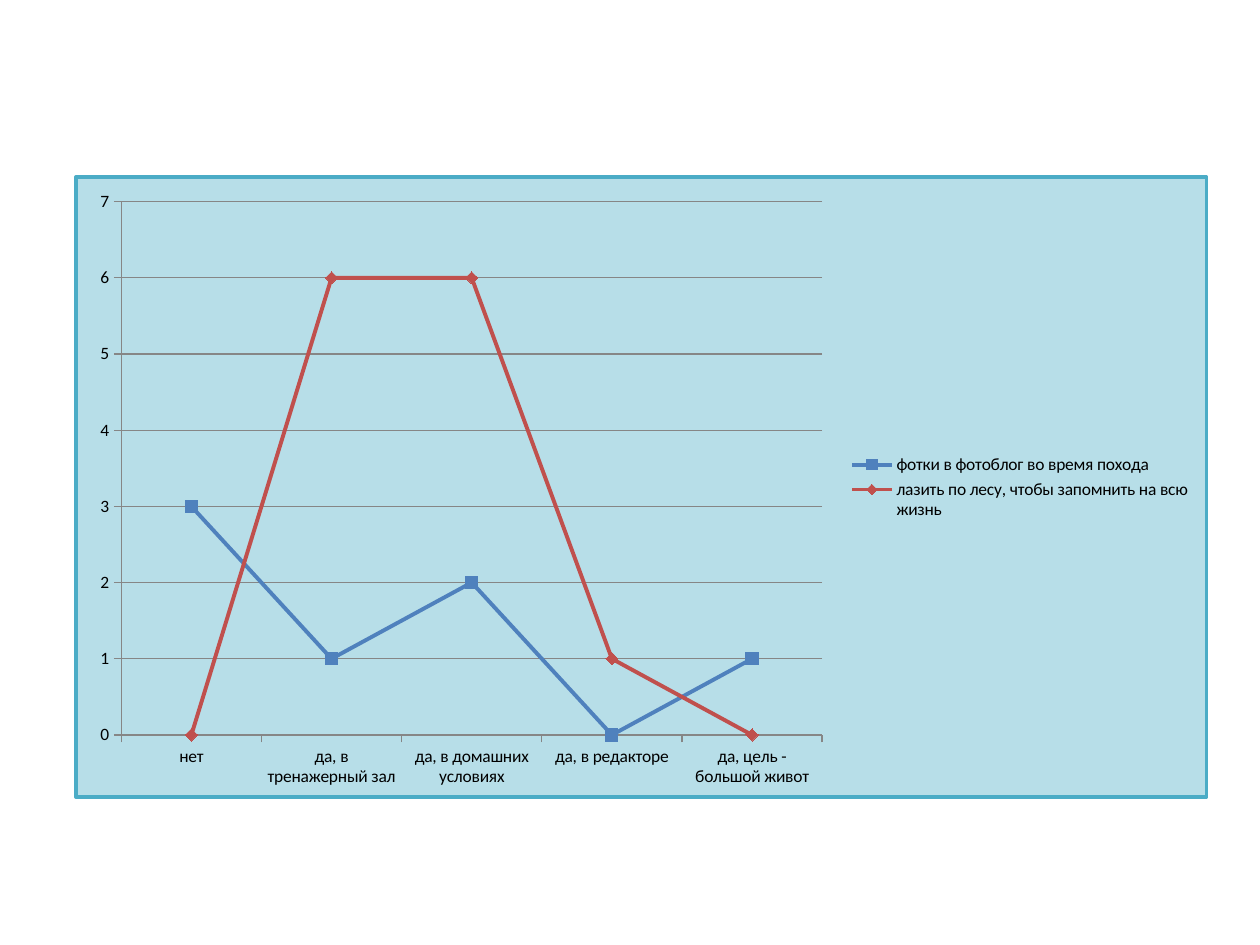
"""Build a slide with one line chart comparing two groups of answers."""
import lxml.etree
import pptx
import pptx.chart.data
import pptx.dml.color
import pptx.enum.chart
import pptx.oxml
import pptx.oxml.ns
import pptx.util

Inches, Pt = pptx.util.Inches, pptx.util.Pt
RGBColor = pptx.dml.color.RGBColor
Marker = pptx.enum.chart.XL_MARKER_STYLE

BLACK = RGBColor(0x00, 0x00, 0x00)
GRAY = RGBColor(0x86, 0x86, 0x86)
BLUE = RGBColor(0x4F, 0x81, 0xBD)
RED = RGBColor(0xC0, 0x50, 0x4D)
PALE_TEAL = RGBColor(0xB7, 0xDE, 0xE8)
TEAL = RGBColor(0x4B, 0xAC, 0xC6)

ANSWERS = [
    "нет",
    "да, в тренажерный зал",
    "да, в домашних условиях",
    "да, в редакторе",
    "да, цель - большой живот",
]
GROUPS = [
    ("фотки в фотоблог во время похода", (3, 1, 2, 0, 1), BLUE, Marker.SQUARE),
    ("лазить по лесу, чтобы запомнить на всю жизнь", (0, 6, 6, 1, 0), RED, Marker.DIAMOND),
]
CHART_BOX = (0.59, 1.39, 9, 4.95)
PLOT_AREA = {"x": 0.04, "y": 0.04, "w": 0.62, "h": 0.86}
LEGEND_AREA = {"x": 0.68, "y": 0.44, "w": 0.31, "h": 0.12}


def format_line(line, color, width):
    line.color.rgb = color
    line.width = Pt(width)


def format_font(font, name="Calibri", size=10, color=BLACK):
    font.name = name
    font.size = Pt(size)
    font.color.rgb = color


def place(element, area, inner=False):
    """Give a chart part a manual layout as fractions of the chart."""
    target = '<c:layoutTarget val="inner"/>' if inner else ""
    modes = "".join(f'<c:{side}Mode val="edge"/>' for side in "xy")
    sizes = "".join(f'<c:{key} val="{value}"/>' for key, value in area.items())
    layout = pptx.oxml.parse_xml(
        f'<c:layout {pptx.oxml.ns.nsdecls("c")}><c:manualLayout>'
        f"{target}{modes}{sizes}</c:manualLayout></c:layout>"
    )
    qn = pptx.oxml.ns.qn
    for previous in element.findall(qn("c:layout")):
        element.remove(previous)
    position = element.find(qn("c:legendPos"))
    if position is None:
        element.insert(0, layout)
    else:
        position.addnext(layout)


def frame(chart, fill, border, width):
    """Fill and outline the whole chart."""
    background = pptx.oxml.parse_xml(
        f'<c:spPr {pptx.oxml.ns.nsdecls("c", "a")}>'
        f'<a:solidFill><a:srgbClr val="{fill}"/></a:solidFill>'
        f'<a:ln w="{Pt(width)}"><a:solidFill><a:srgbClr val="{border}"/></a:solidFill></a:ln>'
        "</c:spPr>"
    )
    chart.element.find(pptx.oxml.ns.qn("c:chart")).addnext(background)


def add_answers_chart(slide):
    answers = pptx.chart.data.CategoryChartData()
    answers.categories = ANSWERS
    for name, values, _, _ in GROUPS:
        answers.add_series(name, values)
    chart = slide.shapes.add_chart(
        pptx.enum.chart.XL_CHART_TYPE.LINE_MARKERS, *map(Inches, CHART_BOX), answers
    ).chart
    chart.has_title = False
    format_font(chart.font)
    frame(chart, PALE_TEAL, TEAL, 2)

    chart.has_legend = True
    chart.legend.position = pptx.enum.chart.XL_LEGEND_POSITION.RIGHT
    chart.legend.include_in_layout = False
    place(chart.legend._element, LEGEND_AREA)
    place(chart.element.find(".//" + pptx.oxml.ns.qn("c:plotArea")), PLOT_AREA, inner=True)

    for axis in (chart.category_axis, chart.value_axis):
        axis.major_tick_mark = pptx.enum.chart.XL_TICK_MARK.OUTSIDE
        axis.minor_tick_mark = pptx.enum.chart.XL_TICK_MARK.NONE
        format_line(axis.format.line, GRAY, 0.75)
    chart.value_axis.minimum_scale = 0
    chart.value_axis.maximum_scale = 7
    chart.value_axis.major_unit = 1
    chart.value_axis.has_major_gridlines = True
    format_line(chart.value_axis.major_gridlines.format.line, GRAY, 0.75)

    chart.plots[0].vary_by_categories = False
    for series, (_, _, color, marker) in zip(chart.plots[0].series, GROUPS):
        series.smooth = False
        format_line(series.format.line, color, 2.25)
        series.marker.style = marker
        series.marker.size = 7
        series.marker.format.fill.solid()
        series.marker.format.fill.fore_color.rgb = color
        format_line(series.marker.format.line, color, 0.75)


def main():
    deck = pptx.Presentation()
    deck.slide_width, deck.slide_height = Inches(10), Inches(7.5)
    slide = deck.slides.add_slide(deck.slide_layouts[6])
    add_answers_chart(slide)
    deck.save("out.pptx")


if __name__ == "__main__":
    main()
